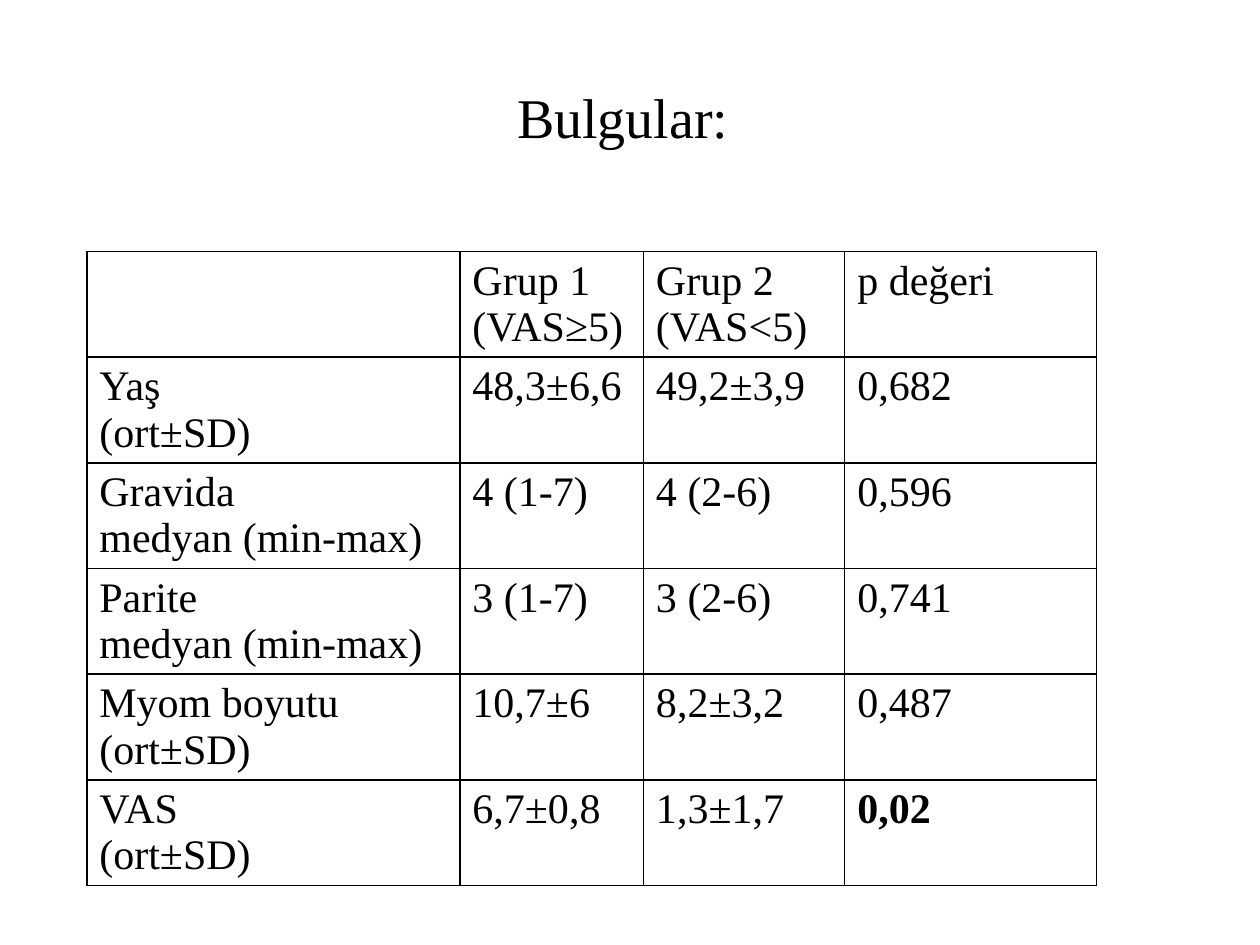
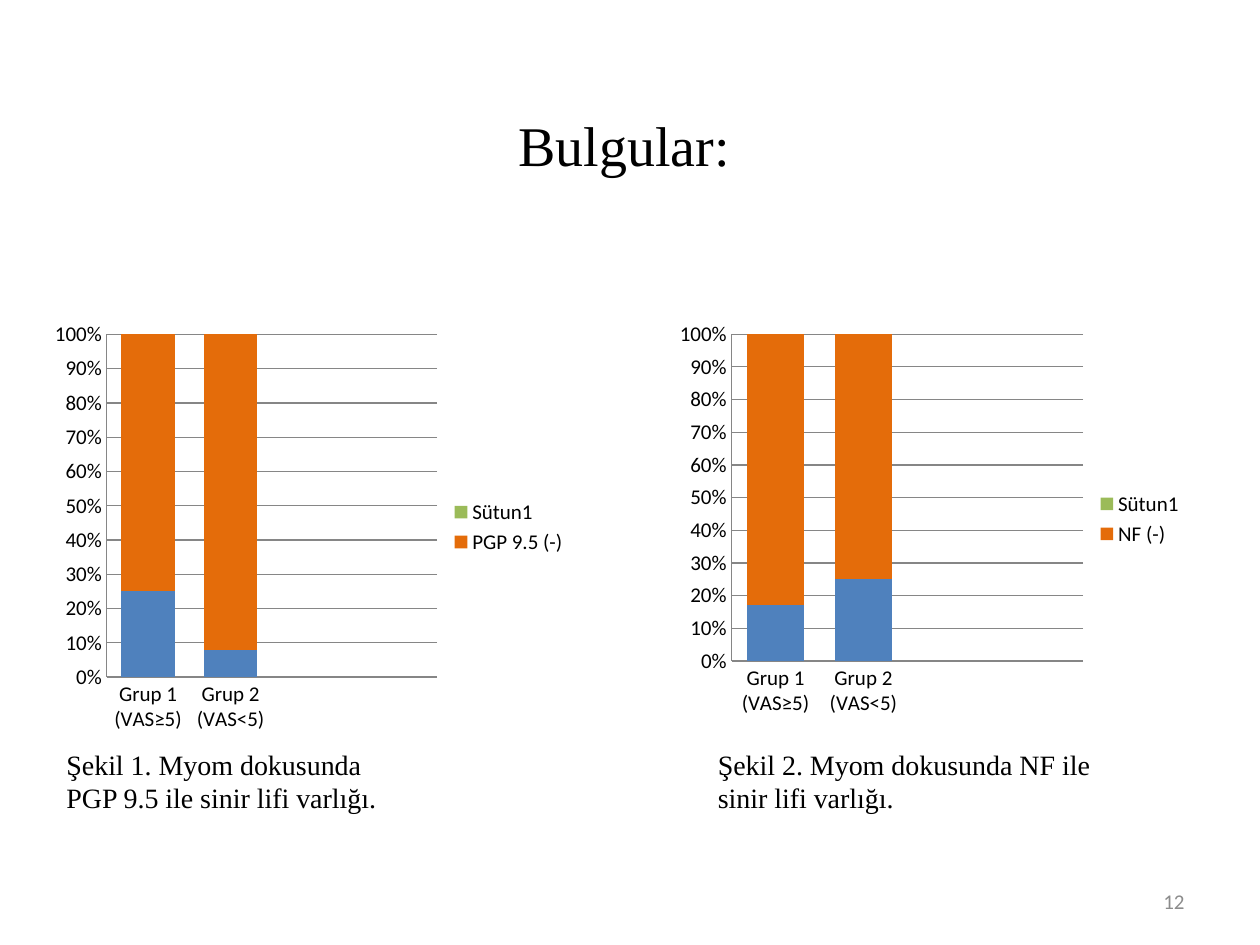
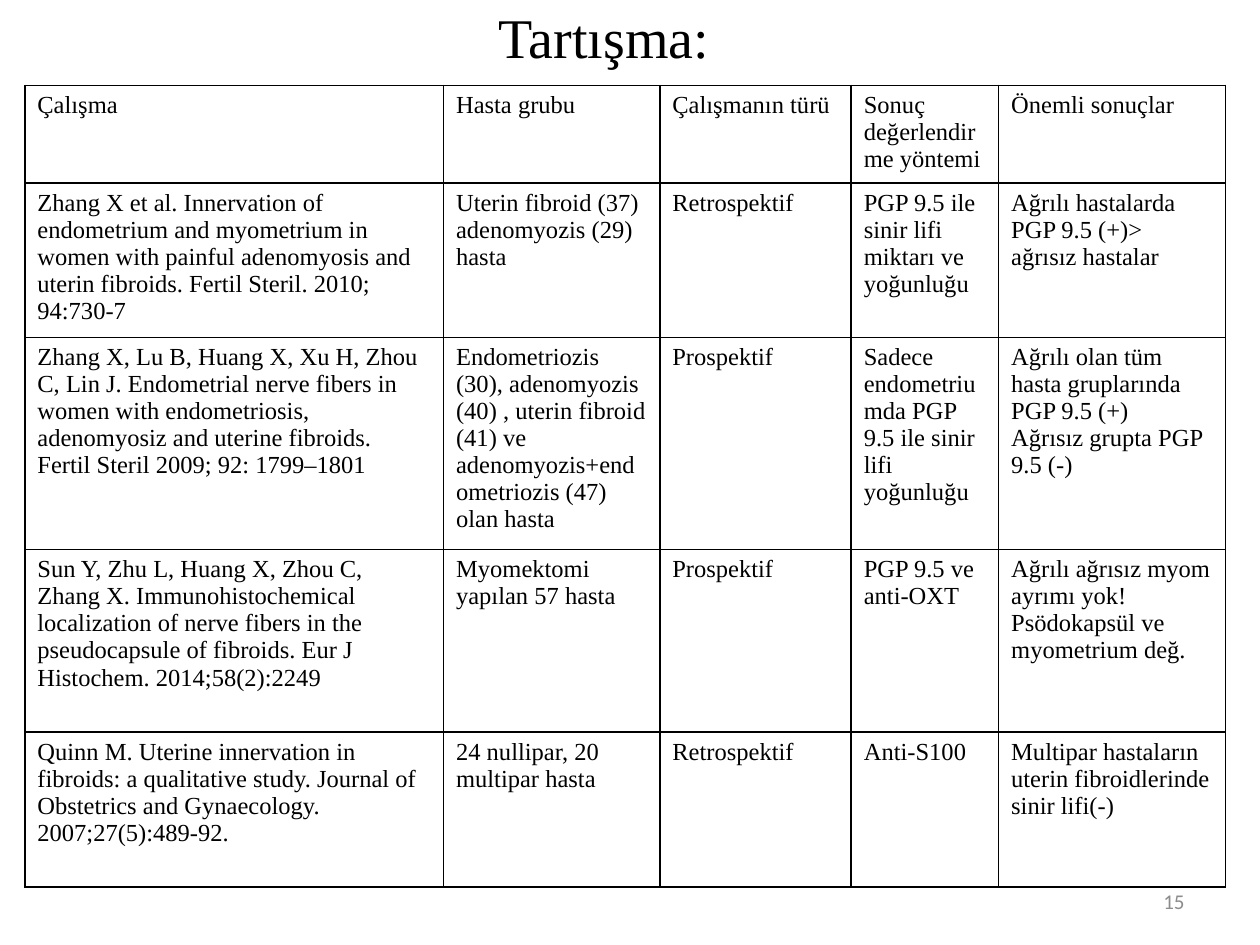
import dataclasses

import lxml.etree
import pptx
import pptx.chart.data
import pptx.dml.color
import pptx.enum.chart
import pptx.enum.dml
import pptx.enum.text
import pptx.oxml
import pptx.oxml.ns
import pptx.util

Cm = pptx.util.Cm
rgb = pptx.dml.color.RGBColor.from_string
qn = pptx.oxml.ns.qn


@dataclasses.dataclass(frozen=True)
class Theme:
    serif: str = "Times New Roman"
    sans: str = "Calibri"
    ink: str = "000000"
    muted: str = "8C8C8C"
    grid: str = "868686"
    bars: tuple = ("4F81BD", "E46C0A", "9BBB59")
    title: int = 32
    findings: int = 24
    caption: int = 16
    studies: int = 14
    small: int = 12


theme = Theme()


def format_runs(text_frame, size, font=theme.serif, color=theme.ink, align=None):
    for paragraph in text_frame.paragraphs:
        paragraph.alignment = align
        for run in paragraph.runs:
            run.font.size = pptx.util.Pt(size)
            run.font.name = font
            run.font.color.rgb = rgb(color)


def add_bordered_table(slide, left, top, widths, heights, rows, size):
    table = slide.shapes.add_table(
        len(heights), len(widths), Cm(left), Cm(top), Cm(sum(widths)), Cm(sum(heights))
    ).table
    table.first_row = table.horz_banding = False
    for column, width in zip(table.columns, widths):
        column.width = Cm(width)
    for row, height, texts in zip(table.rows, heights, rows):
        row.height = Cm(height)
        for cell, text in zip(row.cells, texts):
            cell.text_frame.text = text
            cell.margin_bottom = 0
            format_runs(cell.text_frame, size)
            properties = cell._tc.get_or_add_tcPr()
            for side in ("a:lnL", "a:lnR", "a:lnT", "a:lnB"):
                border = lxml.etree.SubElement(properties, qn(side), w="12700")
                border_fill = lxml.etree.SubElement(border, qn("a:solidFill"))
                lxml.etree.SubElement(border_fill, qn("a:srgbClr"), val=theme.ink)
            cell.fill.background()
    return table


deck = pptx.Presentation()
deck.slide_width, deck.slide_height = Cm(25.4), Cm(19.05)

pages = []
for heading, left, top, height, number in (
    ("Bulgular: ", 1.27, 0.76, 3.18, None),
    ("Bulgular: ", 1.3, 2.13, 1.55, "12"),
    ("Tartışma: ", 0.89, -0.86, 3.18, "15"),
):
    page = deck.slides.add_slide(deck.slide_layouts[5])
    title = page.shapes.title
    title.left, title.top, title.width, title.height = Cm(left), Cm(top), Cm(22.86), Cm(height)
    title.text_frame.text = heading
    title.text_frame.auto_size = pptx.enum.text.MSO_AUTO_SIZE.NONE
    title.text_frame.vertical_anchor = pptx.enum.text.MSO_ANCHOR.MIDDLE
    format_runs(title.text_frame, theme.title, align=pptx.enum.text.PP_ALIGN.CENTER)
    if number:
        page_number = page.shapes.add_textbox(Cm(18.2), Cm(17.66), Cm(5.93), Cm(1.01)).text_frame
        page_number.text = number
        page_number.word_wrap = True
        page_number.vertical_anchor = pptx.enum.text.MSO_ANCHOR.MIDDLE
        format_runs(page_number, theme.small, theme.sans, theme.muted, pptx.enum.text.PP_ALIGN.RIGHT)
    pages.append(page)

findings_page, staining_page, discussion_page = pages
groups = ["Grup 1 (VAS≥5)", "Grup 2 (VAS<5)"]

findings = add_bordered_table(
    findings_page, 1.75, 5.07, [7.52, 3.7, 4.06, 5.08], [2.13] * 6,
    [
        ["", *groups, "p değeri"],
        ["Yaş\n(ort±SD)", "48,3±6,6", "49,2±3,9", "0,682"],
        ["Gravida\nmedyan (min-max)", "4 (1-7)", "4 (2-6)", "0,596"],
        ["Parite\nmedyan (min-max)", "3 (1-7)", "3 (2-6)", "0,741"],
        ["Myom boyutu\n(ort±SD)", "10,7±6", "8,2±3,2", "0,487"],
        ["VAS\n(ort±SD)", "6,7±0,8", "1,3±1,7", "0,02"],
    ],
    theme.findings,
)
findings.cell(5, 3).text_frame.paragraphs[0].runs[0].font.bold = True

for marker, positive, negative, chart_box, caption, caption_left, caption_width in (
    ("PGP 9.5 (-)", (25, 8), (75, 92), (0.89, 6.32, 10.8, 8.61),
     "Şekil 1. Myom dokusunda PGP 9.5 ile sinir lifi varlığı.", 1.09, 7.19),
    ("NF (-)", (17, 25), (83, 75), (13.49, 6.32, 10.62, 8.28),
     "Şekil 2. Myom dokusunda NF ile sinir lifi varlığı.", 14.22, 8.79),
):
    staining = pptx.chart.data.CategoryChartData()
    staining.categories = groups + ["", ""]
    staining.add_series("Series 1", (*positive, None, None))
    staining.add_series(marker, (*negative, None, None))
    staining.add_series("Sütun1", (None,) * 4)
    chart = staining_page.shapes.add_chart(
        pptx.enum.chart.XL_CHART_TYPE.COLUMN_STACKED_100, *map(Cm, chart_box), staining
    ).chart
    chart.has_title = False
    chart.font.size = pptx.util.Pt(theme.small)
    chart.font.name = theme.sans
    chart.font.color.rgb = rgb(theme.ink)

    plot = chart.plots[0]
    plot.gap_width, plot.overlap, plot.vary_by_categories = 55, 100, False
    for series, color in zip(plot.series, theme.bars):
        series.format.fill.solid()
        series.format.fill.fore_color.rgb = rgb(color)

    for axis in (chart.category_axis, chart.value_axis):
        axis.major_tick_mark = axis.minor_tick_mark = pptx.enum.chart.XL_TICK_MARK.NONE
        axis.format.line.color.rgb = rgb(theme.grid)
    chart.value_axis.has_major_gridlines = True
    chart.value_axis.major_gridlines.format.line.color.rgb = rgb(theme.grid)
    chart.value_axis.tick_labels.number_format = "0%"
    chart.value_axis.tick_labels.number_format_is_linked = False

    chart.has_legend = True
    chart.legend.position = pptx.enum.chart.XL_LEGEND_POSITION.RIGHT
    chart.legend.include_in_layout = False
    hidden_entry = lxml.etree.Element(qn("c:legendEntry"))
    lxml.etree.SubElement(hidden_entry, qn("c:idx"), val="0")
    lxml.etree.SubElement(hidden_entry, qn("c:delete"), val="1")
    chart.legend._element.insert(1, hidden_entry)

    caption_text = staining_page.shapes.add_textbox(
        Cm(caption_left), Cm(14.94), Cm(caption_width), Cm(1.63)
    ).text_frame
    caption_text.text = caption
    caption_text.word_wrap = True
    format_runs(caption_text, theme.caption)

add_bordered_table(
    discussion_page, 0.5, 1.72, [8.44, 4.36, 3.86, 2.97, 4.57], [1.97, 3.11, 4.26, 3.68, 3.12],
    [
        ["Çalışma", "Hasta grubu", "Çalışmanın türü", "Sonuç değerlendirme yöntemi", "Önemli sonuçlar"],
        [
            "Zhang X et al. Innervation of endometrium and myometrium in women with painful "
            "adenomyosis and uterin fibroids. Fertil Steril. 2010; 94:730-7",
            "Uterin fibroid (37) adenomyozis (29) hasta",
            "Retrospektif",
            "PGP 9.5 ile sinir lifi miktarı ve yoğunluğu",
            "Ağrılı hastalarda PGP 9.5 (+)> ağrısız hastalar",
        ],
        [
            "Zhang X, Lu B, Huang X, Xu H, Zhou C, Lin J. Endometrial nerve fibers in women with "
            "endometriosis, adenomyosiz and uterine fibroids. Fertil Steril 2009; 92: 1799–1801",
            "Endometriozis (30), adenomyozis (40) , uterin fibroid (41) ve "
            "adenomyozis+endometriozis (47) olan hasta",
            "Prospektif",
            "Sadece endometriumda PGP 9.5 ile sinir lifi yoğunluğu",
            "Ağrılı olan tüm hasta gruplarında PGP 9.5 (+)\nAğrısız grupta PGP 9.5 (-)",
        ],
        [
            "Sun Y, Zhu L, Huang X, Zhou C, Zhang X. Immunohistochemical localization of nerve "
            "fibers in the pseudocapsule of fibroids. Eur J Histochem. 2014;58(2):2249",
            "Myomektomi yapılan 57 hasta",
            "Prospektif",
            "PGP 9.5 ve anti-OXT",
            "Ağrılı ağrısız myom ayrımı yok! Psödokapsül ve myometrium değ.",
        ],
        [
            "Quinn M. Uterine innervation in fibroids: a qualitative study. Journal of Obstetrics "
            "and Gynaecology. 2007;27(5):489-92.",
            "24 nullipar, 20 multipar hasta",
            "Retrospektif",
            "Anti-S100",
            "Multipar hastaların uterin fibroidlerinde sinir lifi(-)",
        ],
    ],
    theme.studies,
)

deck.save("out.pptx")
